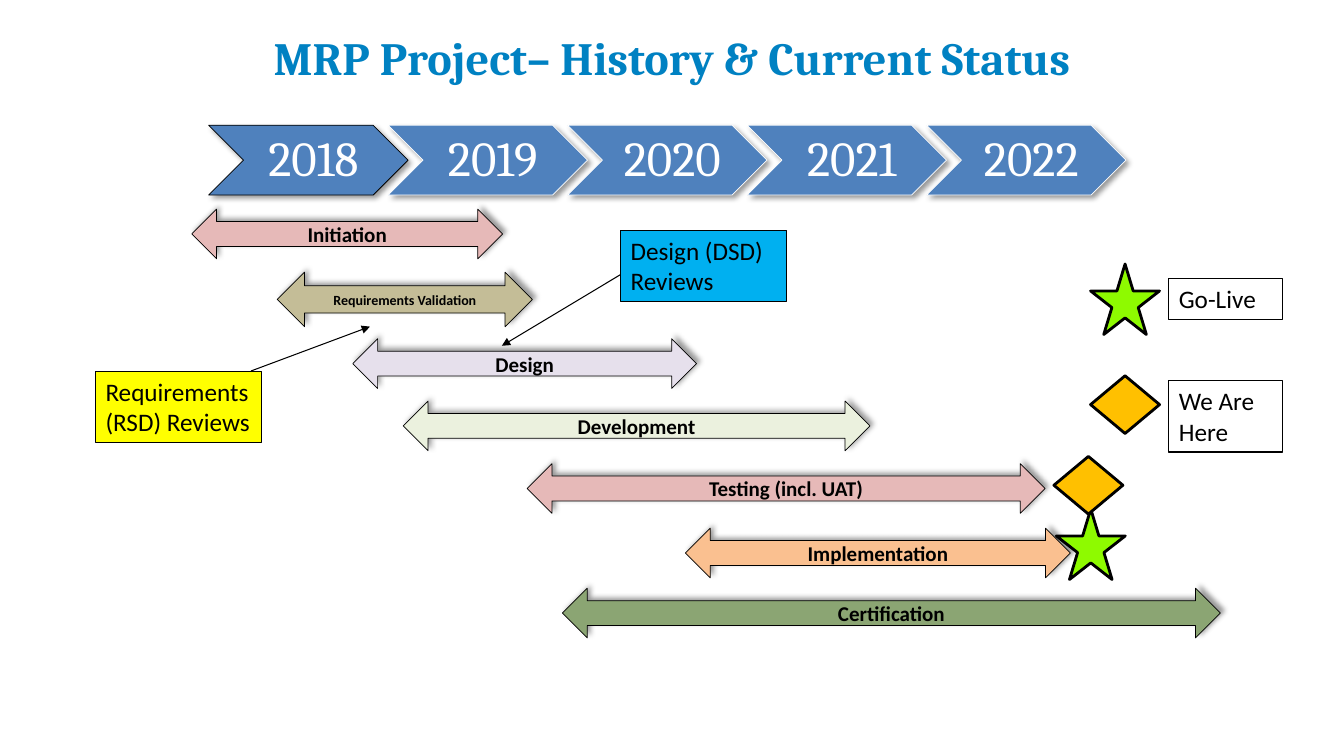
from dataclasses import dataclass

import lxml.etree
import pptx
import pptx.dml.color
import pptx.enum.shapes
import pptx.enum.text
import pptx.oxml
import pptx.oxml.ns
import pptx.shapes.autoshape
import pptx.shapes.base
import pptx.slide
import pptx.text.text
import pptx.util

Pt = pptx.util.Pt
Shape = pptx.shapes.autoshape.Shape
Kind = pptx.enum.shapes.MSO_SHAPE
Anchor = pptx.enum.text.MSO_ANCHOR
Align = pptx.enum.text.PP_ALIGN


@dataclass
class Phase:
    label: str
    left: float
    top: float
    width: float
    fill: str
    height: float = 35.5
    size: float = 15


@dataclass
class Note:
    label: str
    left: float
    top: float
    width: float
    height: float
    fill: str | None = None


@dataclass
class Pointer:
    start: tuple[float, float]
    end: tuple[float, float]


@dataclass
class Marker:
    kind: Kind
    left: float
    top: float
    height: float
    fill: str


YEARS = range(2018, 2023)
YEAR_LEFT, YEAR_TOP, YEAR_STEP = 149, 89.5, 128.2
YEAR_WIDTH, YEAR_HEIGHT = 142.5, 49.9

PHASES = [
    Phase("Initiation", 137, 149.4, 222, "E6B9B8"),
    Phase("Requirements Validation", 198, 194.4, 182.3, "C4BD97", 39, 10),
    Phase("Design", 252, 242, 245.5, "E6E0EC"),
    Phase("Development", 288, 286.5, 333.4, "EBF1DE"),
    Phase("Testing (incl. UAT)", 376.5, 331.2, 370, "E6B9B8"),
    Phase("Implementation", 489.6, 377.3, 275, "FAC090"),
    Phase("Certification", 401.7, 420.2, 470, "8BA573"),
]
POINTERS = [
    Pointer((443.5, 196), (358.5, 247)),
    Pointer((179.3, 265), (264.3, 233.3)),
]
NOTES = [
    Note("Design (DSD) Reviews", 443.3, 164.4, 118.8, 50.9, "00B0F0"),
    Note("Requirements (RSD) Reviews", 68.3, 265.1, 118.8, 50.9, "FFFF00"),
    Note("Go-Live", 835, 199, 81, 29.1),
    Note("We Are Here", 835, 272, 81, 50.9),
]
MARKERS = [
    Marker(Kind.STAR_5_POINT, 754.5, 363.6, 50.4, "8EFA00"),
    Marker(Kind.DIAMOND, 752.8, 326, 41.2, "FFC000"),
    Marker(Kind.STAR_5_POINT, 779, 188.6, 50.4, "8EFA00"),
    Marker(Kind.DIAMOND, 779, 268.4, 41.2, "FFC000"),
]
MARKER_WIDTH = 49.3


def rgb(value: str) -> pptx.dml.color.RGBColor:
    return pptx.dml.color.RGBColor.from_string(value)


def write(frame: pptx.text.text.TextFrame, text: str, font: str, size: float,
          color: str, bold: bool = False, align: Align = Align.CENTER,
          anchor: Anchor = Anchor.MIDDLE) -> None:
    frame.text = text
    frame.word_wrap = True
    frame.vertical_anchor = anchor
    paragraph = frame.paragraphs[0]
    paragraph.alignment = align
    style = paragraph.runs[0].font
    style.name, style.size, style.bold = font, Pt(size), bold
    style.color.rgb = rgb(color)


def add_outlined(slide: pptx.slide.Slide, kind: Kind, left: float, top: float,
                 width: float, height: float, fill: str | None,
                 line: str, weight: float) -> Shape:
    shape = slide.shapes.add_shape(kind, Pt(left), Pt(top), Pt(width), Pt(height))
    if fill:
        shape.fill.solid()
        shape.fill.fore_color.rgb = rgb(fill)
    else:
        shape.fill.background()
    shape.line.color.rgb = rgb(line)
    shape.line.width = Pt(weight)
    shape.shadow.inherit = False
    return shape


def cast_shadow(shape: Shape, degrees: int) -> None:
    effects = shape.element.spPr.find(pptx.oxml.ns.qn("a:effectLst"))
    effects.append(pptx.oxml.parse_xml(
        f'<a:outerShdw {pptx.oxml.ns.nsdecls("a")} blurRad="{Pt(4)}" dist="{Pt(3)}" '
        f'dir="{degrees * 60000}" rotWithShape="0"><a:srgbClr val="000000">'
        '<a:alpha val="40000"/></a:srgbClr></a:outerShdw>'))


def add_title(slide: pptx.slide.Slide) -> None:
    title = slide.shapes.add_textbox(Pt(156), Pt(13), Pt(648), Pt(56))
    write(title.text_frame, "MRP Project– History & Current Status",
          "Cambria", 33, "0081C2", bold=True)


def add_year(slide: pptx.slide.Slide, index: int, year: int) -> None:
    chevron = add_outlined(slide, Kind.CHEVRON, YEAR_LEFT + index * YEAR_STEP, YEAR_TOP,
                           YEAR_WIDTH, YEAR_HEIGHT, "4F81BD",
                           "FFFFFF" if index else "000000", 0.5)
    cast_shadow(chevron, 45)
    frame = chevron.text_frame
    write(frame, str(year), "Cambria", 35, "FFFFFF")
    frame.paragraphs[0].line_spacing = 0.9
    frame.margin_left = Pt(10.8)
    frame.margin_right = frame.margin_top = frame.margin_bottom = Pt(3.6)


def add_phase(slide: pptx.slide.Slide, phase: Phase) -> None:
    arrow = add_outlined(slide, Kind.LEFT_RIGHT_ARROW, phase.left, phase.top,
                         phase.width, phase.height, phase.fill, "000000", 0.5)
    cast_shadow(arrow, 315)
    write(arrow.text_frame, phase.label, "Calibri", phase.size, "000000", bold=True)


def add_pointer(slide: pptx.slide.Slide, pointer: Pointer) -> None:
    connector = slide.shapes.add_connector(
        pptx.enum.shapes.MSO_CONNECTOR.STRAIGHT,
        *(Pt(value) for value in pointer.start + pointer.end))
    connector.line.color.rgb = rgb("000000")
    connector.line.width = Pt(0.75)
    qn = pptx.oxml.ns.qn
    lxml.etree.SubElement(connector.line._get_or_add_ln(), qn("a:tailEnd"), type="triangle")
    lxml.etree.SubElement(connector.element.spPr, qn("a:effectLst"))


def add_note(slide: pptx.slide.Slide, note: Note) -> None:
    box = add_outlined(slide, Kind.RECTANGLE, note.left, note.top, note.width,
                       note.height, note.fill, "000000", 0.75)
    write(box.text_frame, note.label, "Calibri", 18, "000000",
          align=Align.LEFT, anchor=Anchor.TOP)
    box.text_frame.auto_size = pptx.enum.text.MSO_AUTO_SIZE.SHAPE_TO_FIT_TEXT


def main() -> None:
    deck = pptx.Presentation()
    deck.slide_width, deck.slide_height = Pt(960), Pt(540)
    slide = deck.slides.add_slide(deck.slide_layouts[6])
    add_title(slide)
    for index, year in enumerate(YEARS):
        add_year(slide, index, year)
    for phase in PHASES:
        add_phase(slide, phase)
    for pointer in POINTERS:
        add_pointer(slide, pointer)
    for marker in MARKERS:
        add_outlined(slide, marker.kind, marker.left, marker.top, MARKER_WIDTH,
                     marker.height, marker.fill, "000000", 2)
    for note in NOTES:
        add_note(slide, note)
    deck.save("out.pptx")


if __name__ == "__main__":
    main()
